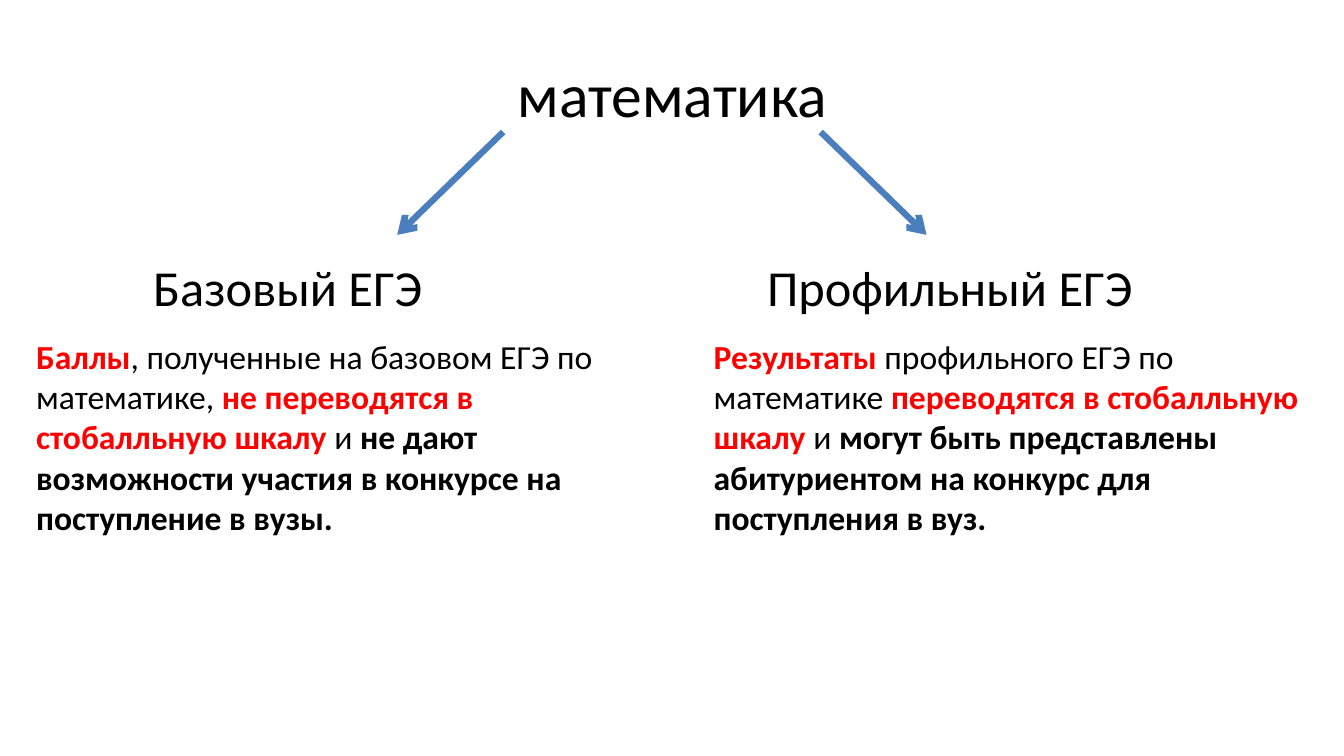
from lxml import etree
from pptx import Presentation
from pptx.dml.color import RGBColor
from pptx.enum.shapes import MSO_CONNECTOR
from pptx.enum.text import MSO_ANCHOR, PP_ALIGN
from pptx.oxml.ns import qn
from pptx.util import Inches, Pt

STRAIGHT = MSO_CONNECTOR.STRAIGHT
MIDDLE = MSO_ANCHOR.MIDDLE
CENTER = PP_ALIGN.CENTER
COLORS = {"black": "000000", "red": "FF0000", "blue": "4B7EBC"}


def style(run, size, color="black", bold=False):
    run.font.name = "Calibri"
    run.font.size = Pt(size)
    run.font.bold = bold
    run.font.color.rgb = RGBColor.from_string(COLORS[color])


def add_box(left, top, width, height, wrap):
    box = slide.shapes.add_textbox(Inches(left), Inches(top), Inches(width), Inches(height))
    box.text_frame.word_wrap = wrap
    return box.text_frame.paragraphs[0]


prs = Presentation()
prs.slide_width = Inches(13.33)
prs.slide_height = Inches(7.5)
slide = prs.slides.add_slide(prs.slide_layouts[5])

title = slide.shapes.title
title.left, title.top = Inches(0.67), Inches(0.3)
title.width, title.height = Inches(12), Inches(1.25)
title.text_frame.text = "математика"
title.text_frame.vertical_anchor = MIDDLE
head = title.text_frame.paragraphs[0]
head.alignment = CENTER
style(head.runs[0], 44)

for start, end in [(4.99, 3.94), (8.14, 9.19)]:
    arrow = slide.shapes.add_connector(
        STRAIGHT, Inches(start), Inches(1.31), Inches(end), Inches(2.33))
    arrow.line.width = Pt(4.5)
    arrow.line.color.rgb = RGBColor.from_string(COLORS["blue"])
    etree.SubElement(arrow.line._get_or_add_ln(), qn("a:tailEnd"), type="arrow")
    etree.SubElement(arrow._element.spPr, qn("a:effectLst"))

exams = [
    ("Базовый ЕГЭ", 1.42, 2.9, 0.26, 5.72, [
        ("Баллы", "red", True),
        (", полученные на базовом ЕГЭ по математике, ", "black", False),
        ("не переводятся в стобалльную шкалу ", "red", True),
        ("и ", "black", False),
        ("не дают возможности участия в конкурсе на поступление в вузы.", "black", True),
    ]),
    ("Профильный ЕГЭ", 7.51, 3.87, 6.98, 6.04, [
        ("Результаты", "red", True),
        (" профильного ЕГЭ по математике ", "black", False),
        ("переводятся в стобалльную шкалу ", "red", True),
        ("и ", "black", False),
        ("могут быть представлены абитуриентом на конкурс для поступления в вуз.", "black", True),
    ]),
]

for name, name_left, name_width, left, width, parts in exams:
    label = add_box(name_left, 2.49, name_width, 0.71, False)
    label.text = name
    style(label.runs[0], 36)
    body = add_box(left, 3.28, width, 2.12, True)
    for text, color, bold in parts:
        run = body.add_run()
        run.text = text
        style(run, 24, color, bold)

prs.save("out.pptx")
